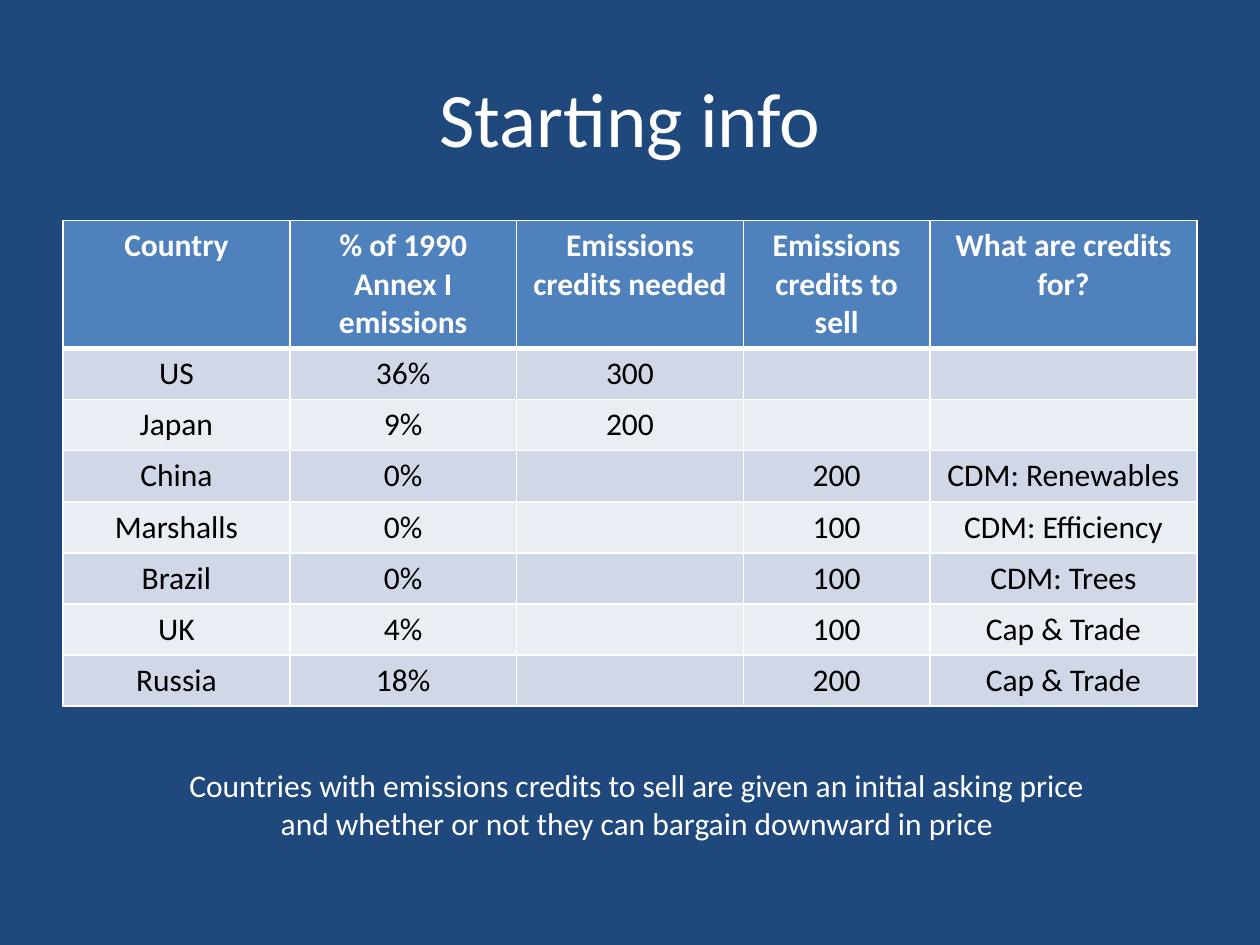
from dataclasses import dataclass

from lxml import etree
from pptx import Presentation
from pptx.dml.color import RGBColor
from pptx.enum.text import MSO_ANCHOR, PP_ALIGN
from pptx.oxml.ns import qn
from pptx.util import Pt

CENTER = PP_ALIGN.CENTER
MIDDLE = MSO_ANCHOR.MIDDLE
TITLE_ONLY = 5


@dataclass(frozen=True)
class Theme:
    font: str = "Calibri"
    title_size: float = 44
    body_size: float = 18
    background: str = "1F497D"
    light: str = "FFFFFF"
    dark: str = "000000"
    header: str = "4F81BD"
    bands: tuple[str, str] = ("D0D8E8", "E9EDF4")
    thin_border: float = 1
    header_border: float = 3


@dataclass(frozen=True)
class Country:
    name: str
    share: str
    needed: str = ""
    to_sell: str = ""
    purpose: str = ""

    def values(self) -> tuple[str, ...]:
        return self.name, self.share, self.needed, self.to_sell, self.purpose


THEME = Theme()
HEADINGS = ("Country", "% of 1990 Annex I emissions", "Emissions credits needed",
            "Emissions credits to sell", "What are credits for?")
COUNTRIES = (
    Country("US", "36%", needed="300"),
    Country("Japan", "9%", needed="200"),
    Country("China", "0%", to_sell="200", purpose="CDM: Renewables"),
    Country("Marshalls", "0%", to_sell="100", purpose="CDM: Efficiency"),
    Country("Brazil", "0%", to_sell="100", purpose="CDM: Trees"),
    Country("UK", "4%", to_sell="100", purpose="Cap & Trade"),
    Country("Russia", "18%", to_sell="200", purpose="Cap & Trade"),
)
COLUMN_WIDTHS = (129.6, 129.6, 129.6, 106.6, 152.6)
HEADER_HEIGHT = 72
ROW_HEIGHT = 29.2


def write(frame, text: str, size: float, color: str, bold: bool = False) -> None:
    """Put one centred paragraph in a text frame and format its runs."""
    frame.text = text
    paragraph = frame.paragraphs[0]
    paragraph.alignment = CENTER
    for run in paragraph.runs:
        run.font.name = THEME.font
        run.font.size = Pt(size)
        run.font.bold = bold
        run.font.color.rgb = RGBColor.from_string(color)


def set_borders(cell, top: float, bottom: float) -> None:
    """Add the cell's lines, which must precede its fill."""
    properties = cell._tc.get_or_add_tcPr()
    widths = {"L": THEME.thin_border, "R": THEME.thin_border, "T": top, "B": bottom}
    for position, (side, width) in enumerate(widths.items()):
        line = etree.Element(qn(f"a:ln{side}"), w=str(Pt(width)))
        fill = etree.SubElement(line, qn("a:solidFill"))
        etree.SubElement(fill, qn("a:srgbClr"), val=THEME.light)
        properties.insert(position, line)


def fill_row(table, row: int, values: tuple[str, ...]) -> None:
    is_header = row == 0
    fill = THEME.header if is_header else THEME.bands[(row - 1) % 2]
    color = THEME.light if is_header else THEME.dark
    top = THEME.header_border if row == 1 else THEME.thin_border
    bottom = THEME.header_border if is_header else THEME.thin_border
    table.rows[row].height = Pt(HEADER_HEIGHT if is_header else ROW_HEIGHT)
    for column, value in enumerate(values):
        cell = table.cell(row, column)
        cell.fill.solid()
        cell.fill.fore_color.rgb = RGBColor.from_string(fill)
        write(cell.text_frame, value, THEME.body_size, color, is_header)
        set_borders(cell, top, bottom)


def add_country_table(slide) -> None:
    height = HEADER_HEIGHT + ROW_HEIGHT * len(COUNTRIES)
    table = slide.shapes.add_table(
        len(COUNTRIES) + 1, len(HEADINGS),
        Pt(36), Pt(126), Pt(sum(COLUMN_WIDTHS)), Pt(height)).table
    for column, width in zip(table.columns, COLUMN_WIDTHS):
        column.width = Pt(width)
    rows = (HEADINGS, *(country.values() for country in COUNTRIES))
    for row, values in enumerate(rows):
        fill_row(table, row, values)


def main() -> None:
    prs = Presentation()
    prs.slide_width, prs.slide_height = Pt(720), Pt(540)
    slide = prs.slides.add_slide(prs.slide_layouts[TITLE_ONLY])
    slide.background.fill.solid()
    slide.background.fill.fore_color.rgb = RGBColor.from_string(THEME.background)

    # Title
    title = slide.shapes.title
    title.left, title.top, title.width, title.height = Pt(36), Pt(21.6), Pt(648), Pt(90)
    title.text_frame.vertical_anchor = MIDDLE
    write(title.text_frame, "Starting info", THEME.title_size, THEME.light)

    # Emissions by country
    add_country_table(slide)

    # Note on prices
    price_note = slide.shapes.add_textbox(Pt(88.5), Pt(434), Pt(551), Pt(51)).text_frame
    price_note.word_wrap = True
    write(price_note,
          "Countries with emissions credits to sell are given an initial asking price "
          "and whether or not they can bargain downward in price",
          THEME.body_size, THEME.light)

    prs.save("out.pptx")


if __name__ == "__main__":
    main()
